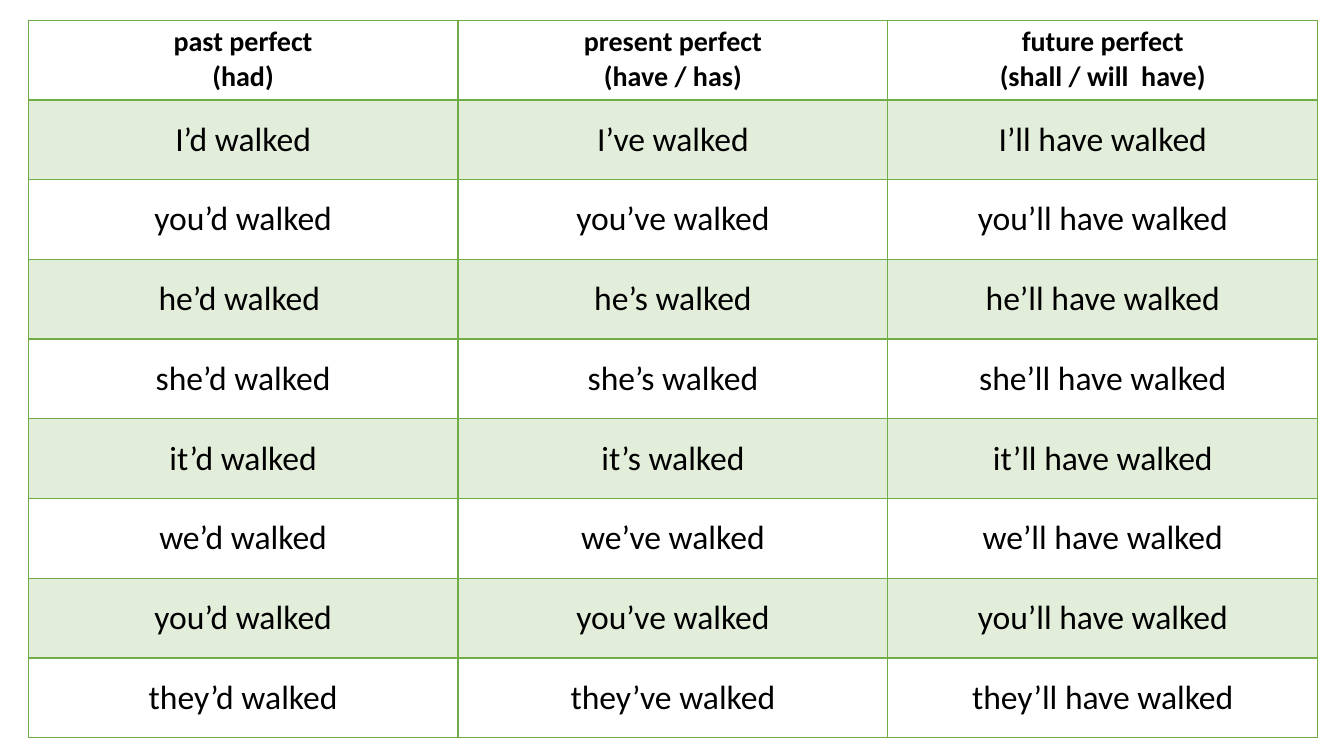
import pptx
import pptx.util
import pptx.dml.color
import pptx.enum.text
import pptx.oxml
import pptx.oxml.ns
import lxml.etree

Inches = pptx.util.Inches
COLORS = {"green": "70AD47", "black": "000000"}
HEADERS = [
    ["past perfect", "(had)"],
    ["present perfect", "(have / has)"],
    ["future perfect", "(shall / will  have)"],
]
PRONOUNS = [
    ("I", "ve"), ("you", "ve"), ("he", "s"), ("she", "s"),
    ("it", "s"), ("we", "ve"), ("you", "ve"), ("they", "ve"),
]


def add_border(cell, side, width):
    properties = cell._tc.get_or_add_tcPr()
    line = lxml.etree.SubElement(properties, pptx.oxml.ns.qn(f"a:ln{side}"), w=str(pptx.util.Pt(width)))
    fill = lxml.etree.SubElement(line, pptx.oxml.ns.qn("a:solidFill"))
    lxml.etree.SubElement(fill, pptx.oxml.ns.qn("a:srgbClr"), val=COLORS["green"])


def write_lines(cell, lines, size, bold):
    for index, text in enumerate(lines):
        frame = cell.text_frame
        paragraph = frame.add_paragraph() if index else frame.paragraphs[0]
        paragraph.alignment = pptx.enum.text.PP_ALIGN.CENTER
        run = paragraph.add_run()
        run.text = text
        run.font.name = "Calibri"
        run.font.size = pptx.util.Pt(size)
        run.font.bold = bold
        run.font.color.rgb = pptx.dml.color.RGBColor.from_string(COLORS["black"])


presentation = pptx.Presentation()
presentation.slide_width = Inches(13.33)
presentation.slide_height = Inches(7.5)
slide = presentation.slides.add_slide(presentation.slide_layouts[6])

rows = [HEADERS]
for pronoun, present in PRONOUNS:
    past = f"{pronoun}’d walked"
    if pronoun == "he":
        past += " "
    rows.append([[past], [f"{pronoun}’{present} walked"], [f"{pronoun}’ll have walked"]])

table = slide.shapes.add_table(
    len(rows), len(HEADERS), Inches(0.28), Inches(0.2), Inches(12.79), Inches(7.12)
).table
table.first_row = False
table.horz_banding = False

for row_index, row in enumerate(rows):
    is_header = row_index == 0
    for column_index, lines in enumerate(row):
        cell = table.cell(row_index, column_index)
        for side in "LRTB":
            is_heavy = (side == "B" and is_header) or (side == "T" and row_index == 1)
            add_border(cell, side, 2 if is_heavy else 1)
        if row_index % 2:
            cell.fill.solid()
            cell.fill.fore_color.rgb = pptx.dml.color.RGBColor.from_string(COLORS["green"])
            color = cell._tc.tcPr.find(pptx.oxml.ns.qn("a:solidFill"))[0]
            lxml.etree.SubElement(color, pptx.oxml.ns.qn("a:alpha"), val="20000")
        else:
            cell.fill.background()
        if not is_header:
            cell.vertical_anchor = pptx.enum.text.MSO_ANCHOR.MIDDLE
        write_lines(cell, lines, 20 if is_header else 24, is_header)

presentation.save("out.pptx")
